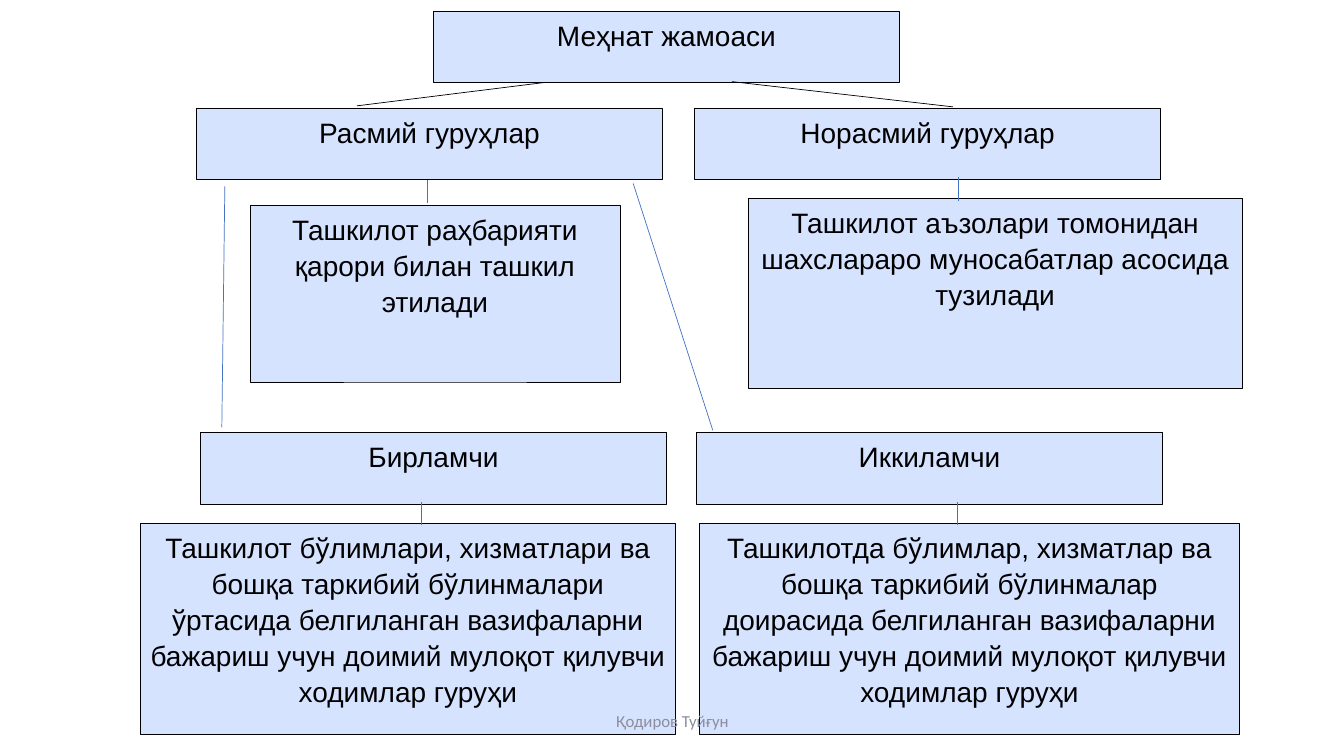
from pptx import Presentation
from pptx.dml.color import RGBColor
from pptx.enum import shapes, text
from pptx.oxml.ns import qn
from pptx.util import Inches, Pt
from lxml import etree

BLACK, BLUE, PALE_BLUE, GREY = "000000", "4472C4", "D6E3FF", "8C8D9D"


def color(hex_value):
    return RGBColor.from_string(hex_value)


def write(shape, words, font_name, size, font_color):
    frame = shape.text_frame
    frame.word_wrap = True
    frame.text = words
    paragraph = frame.paragraphs[0]
    paragraph.alignment = text.PP_ALIGN.CENTER
    font = paragraph.runs[0].font
    font.name, font.size = font_name, Pt(size)
    font.color.rgb = color(font_color)
    return paragraph


presentation = Presentation()
presentation.slide_width = Inches(13.33)
presentation.slide_height = Inches(7.5)
slide = presentation.slides.add_slide(presentation.slide_layouts[6])

# Boxes: heading boxes share one size, description boxes have their own
heading = (4.62, 0.71)
boxes = [
    (4.3, 0.11, *heading, "Меҳнат жамоаси"),
    (1.95, 1.07, *heading, "Расмий гуруҳлар"),
    (6.89, 1.07, *heading, "Норасмий гуруҳлар"),
    (2.48, 2.04, 3.67, 1.75, "Ташкилот раҳбарияти қарори билан ташкил этилади"),
    (7.42, 1.97, 4.9, 1.88,
     "Ташкилот аъзолари томонидан шахслараро муносабатлар асосида тузилади"),
    (1.99, 4.29, *heading, "Бирламчи"),
    (6.91, 4.29, *heading, "Иккиламчи"),
    (1.39, 5.19, 5.31, 2.1,
     "Ташкилот бўлимлари, хизматлари ва бошқа таркибий бўлинмалари ўртасида "
     "белгиланган вазифаларни бажариш учун доимий мулоқот қилувчи ходимлар гуруҳи"),
    (6.94, 5.19, 5.35, 2.1,
     "Ташкилотда бўлимлар, хизматлар ва бошқа таркибий бўлинмалар доирасида "
     "белгиланган вазифаларни бажариш учун доимий мулоқот қилувчи ходимлар гуруҳи"),
]
for left, top, width, height, words in boxes:
    box = slide.shapes.add_shape(shapes.MSO_SHAPE.RECTANGLE, Inches(left), Inches(top),
                                 Inches(width), Inches(height))
    box.shadow.inherit = False
    box.fill.solid()
    box.fill.fore_color.rgb = color(PALE_BLUE)
    box.line.color.rgb = color(BLACK)
    box.line.width = Pt(0.5)
    box.text_frame.vertical_anchor = text.MSO_ANCHOR.TOP
    paragraph = write(box, words, "Arial", 20, BLACK)
    paragraph.line_spacing = 1.07
    paragraph.space_after = Pt(8)

# Connecting lines
lines = [
    (5.39, 0.82, 3.54, 1.05, BLACK),
    (7.26, 0.81, 9.45, 1.06, BLACK),
    (2.23, 1.85, 2.2, 4.24, BLUE),
    (6.28, 1.82, 7.07, 4.27, BLUE),
    (4.24, 1.79, 4.24, 2.01, BLUE),
    (9.51, 1.76, 9.51, 1.99, BLUE),
    (4.18, 4.98, 4.18, 5.21, BLUE),
    (9.5, 4.98, 9.5, 5.21, BLUE),
]
for start_x, start_y, end_x, end_y, line_color in lines:
    connector = slide.shapes.add_connector(
        shapes.MSO_CONNECTOR.STRAIGHT, Inches(start_x), Inches(start_y),
        Inches(end_x), Inches(end_y))
    connector.line.color.rgb = color(line_color)
    connector.line.width = Pt(0.5)
    etree.SubElement(connector._element.spPr, qn("a:effectLst"))

# Footer
footer = slide.shapes.add_textbox(Inches(4.42), Inches(6.95), Inches(4.5), Inches(0.4))
footer.text_frame.vertical_anchor = text.MSO_ANCHOR.MIDDLE
write(footer, "Қодиров Туйғун", "Calibri", 12, GREY)

presentation.save("out.pptx")
